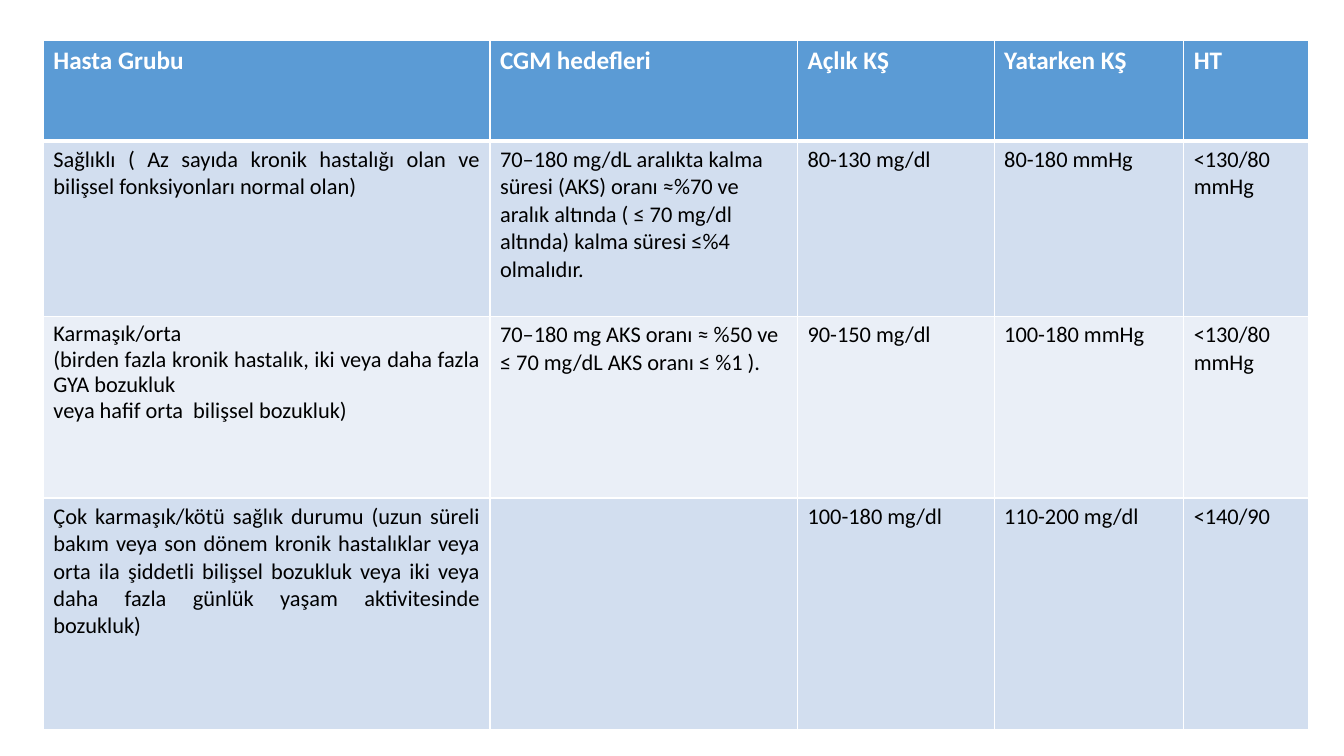
from lxml.etree import SubElement
from pptx import Presentation
from pptx.dml.color import RGBColor
from pptx.enum.text import PP_ALIGN as Align
from pptx.oxml.ns import qn
from pptx.util import Inches, Pt

HEADERS = ["Hasta Grubu", "CGM hedefleri", "Açlık KŞ", "Yatarken KŞ", "HT"]
PATIENT_GROUPS = [
    [
        "Sağlıklı ( Az sayıda kronik hastalığı olan ve bilişsel fonksiyonları normal olan)",
        "70–180 mg/dL aralıkta kalma süresi (AKS) oranı ≈%70 ve aralık altında "
        "( ≤ 70 mg/dl altında) kalma süresi ≤%4 olmalıdır.",
        "80-130 mg/dl",
        "80-180 mmHg",
        "<130/80 mmHg",
    ],
    [
        "Karmaşık/orta\n"
        "(birden fazla kronik hastalık, iki veya daha fazla GYA bozukluk\n"
        "veya hafif orta  bilişsel bozukluk)",
        "70–180 mg AKS oranı ≈ %50 ve ≤ 70 mg/dL AKS oranı ≤ %1 ).",
        "90-150 mg/dl",
        "100-180 mmHg",
        "<130/80 mmHg",
    ],
    [
        "Çok karmaşık/kötü sağlık durumu (uzun süreli bakım veya son dönem kronik "
        "hastalıklar veya orta ila şiddetli bilişsel bozukluk veya iki veya daha fazla "
        "günlük yaşam aktivitesinde bozukluk)",
        "",
        "100-180 mg/dl",
        "110-200 mg/dl",
        "<140/90",
    ],
]
COLUMN_WIDTHS = [4.43, 3.05, 1.95, 1.88, 1.24]
ROW_HEIGHTS = [1.0, 1.74, 1.8, 2.3]
TABLE_LEFT, TABLE_TOP = 0.43, 0.4

THEME = {
    "font": "Calibri",
    "header_size": 18,
    "body_size": 16,
    "header_text": "FFFFFF",
    "body_text": "000000",
    "header_fill": "5B9BD5",
    "bands": ["D2DEEF", "EAEFF7"],
    "border": "FFFFFF",
    "thin": 1,
    "thick": 3,
}


def add_borders(cell, row_index):
    widths = {"a:lnL": THEME["thin"], "a:lnR": THEME["thin"]}
    widths["a:lnT"] = THEME["thick"] if row_index == 1 else THEME["thin"]
    widths["a:lnB"] = THEME["thick"] if row_index == 0 else THEME["thin"]
    properties = cell._tc.get_or_add_tcPr()
    for tag, width in widths.items():
        line = SubElement(properties, qn(tag), w=str(Pt(width)))
        fill = SubElement(line, qn("a:solidFill"))
        SubElement(fill, qn("a:srgbClr"), val=THEME["border"])


def fill_cell(cell, text, row_index, column_index):
    is_header = row_index == 0
    add_borders(cell, row_index)
    band = THEME["bands"][(row_index - 1) % 2]
    cell.fill.solid()
    cell.fill.fore_color.rgb = RGBColor.from_string(
        THEME["header_fill"] if is_header else band
    )
    cell.text_frame.text = text
    paragraphs = cell.text_frame.paragraphs
    for para in paragraphs:
        para.alignment = Align.LEFT
        if column_index == 0 and not is_header:
            para.alignment = Align.JUSTIFY
        if len(paragraphs) > 1:
            para.line_spacing = 0.93
        para.font.size = Pt(THEME["header_size" if is_header else "body_size"])
        for span in para.runs:
            span.font.name = THEME["font"]
            span.font.size = para.font.size
            span.font.bold = is_header
            span.font.color.rgb = RGBColor.from_string(
                THEME["header_text" if is_header else "body_text"]
            )


def main():
    deck = Presentation()
    deck.slide_width, deck.slide_height = Inches(13.33), Inches(7.5)
    page = deck.slides.add_slide(deck.slide_layouts[6])
    rows = [HEADERS] + PATIENT_GROUPS
    table = page.shapes.add_table(
        len(rows), len(HEADERS),
        Inches(TABLE_LEFT), Inches(TABLE_TOP),
        Inches(sum(COLUMN_WIDTHS)), Inches(sum(ROW_HEIGHTS)),
    ).table
    for column, width in zip(table.columns, COLUMN_WIDTHS):
        column.width = Inches(width)
    for row, height in zip(table.rows, ROW_HEIGHTS):
        row.height = Inches(height)
    for row_index, texts in enumerate(rows):
        for column_index, text in enumerate(texts):
            fill_cell(table.cell(row_index, column_index), text, row_index, column_index)
    deck.save("out.pptx")


if __name__ == "__main__":
    main()
